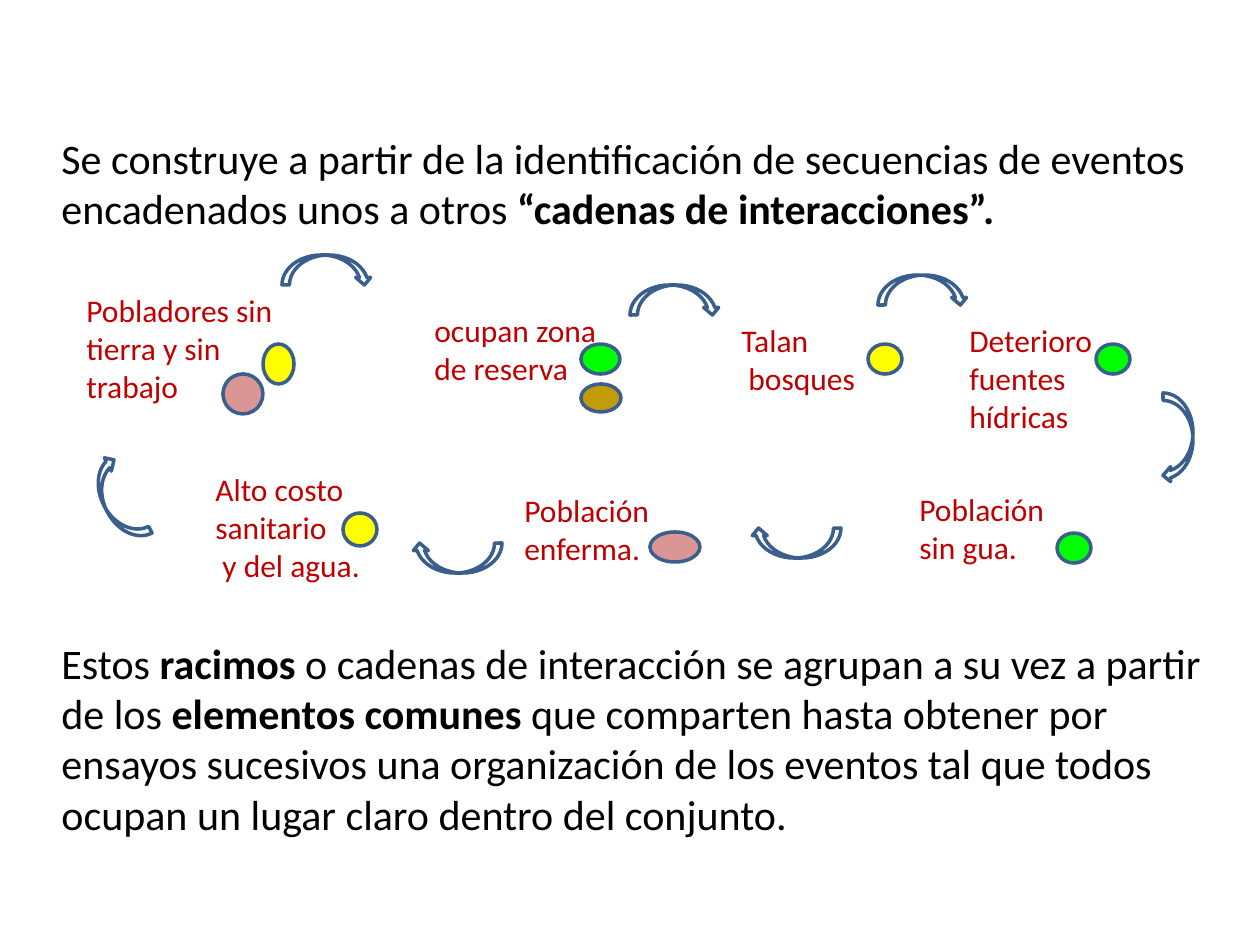
from dataclasses import dataclass

from pptx import Presentation
from pptx import util as u
from pptx.dml.color import RGBColor
from pptx.enum import shapes, text


@dataclass(frozen=True)
class Theme:
    font: str = "Calibri"
    body_size: int = 24
    event_size: int = 18
    body: str = "000000"
    event: str = "C00000"
    outline: str = "3A5F8C"
    outline_width: int = 2
    yellow: str = "FFFF00"
    pink: str = "D99694"
    green: str = "00FF00"
    ochre: str = "C29B0A"


THEME = Theme()
PX = 914400 / 126
SLIDE = (1260, 945)

# Runs are (wording, bold)
BODY = [
    [("Se construye a partir de la identificación de secuencias de eventos "
      "encadenados unos a otros ", False),
     ("“cadenas de interacciones”.", True)],
    [("Estos ", False), ("racimos ", True),
     ("o cadenas de interacción se agrupan a su vez a partir de los ", False),
     ("elementos comunes ", True),
     ("que comparten hasta obtener por ensayos sucesivos una organización de "
      "los eventos tal que todos ocupan un lugar claro dentro del conjunto.", False)],
]
BODY_BOX = (49, 118, 1177, 776)
BODY_TOP_INSET = 14
CHAIN_GAP = 231  # points left between the paragraphs for the chain of events

# Each event: paragraphs, box, and its markers as (colour, box)
EVENTS = [
    (["Pobladores sin tierra y sin trabajo"], (74, 285, 238, 127),
     [(THEME.yellow, (263, 344, 31, 40)), (THEME.pink, (223, 374, 40, 40))]),
    (["ocupan zona de reserva"], (422, 305, 218, 89),
     [(THEME.green, (581, 344, 39, 30)), (THEME.ochre, (581, 384, 40, 28))]),
    (["Talan", " bosques"], (729, 315, 189, 89),
     [(THEME.yellow, (868, 344, 34, 30))]),
    (["Deterioro fuentes hídricas"], (957, 315, 189, 127),
     [(THEME.green, (1096, 344, 34, 30))]),
    (["Población sin gua."], (907, 484, 179, 89),
     [(THEME.green, (1057, 533, 34, 30))]),
    (["Población enferma."], (512, 485, 179, 89),
     [(THEME.pink, (650, 532, 50, 30))]),
    (["Alto costo sanitario", " y del agua."], (203, 464, 179, 127),
     [(THEME.yellow, (343, 513, 34, 33))]),
]

# Left, top and rotation of each arrow, in the order of the chain
ARROWS = [
    (282, 255, 0), (630, 285, 0), (878, 275, 0), (1133, 423, 90),
    (751, 528, 180), (412, 543, 180), (73, 485, 242.5),
]
ARROW_SIZE = (90, 30)


def emu(*lengths):
    return [u.Emu(round(length * PX)) for length in lengths]


def add_text(slide, box, paragraphs, size, colour):
    frame = slide.shapes.add_textbox(*emu(*box)).text_frame
    frame.word_wrap = True
    frame.vertical_anchor = text.MSO_ANCHOR.TOP
    for i, runs in enumerate(paragraphs):
        paragraph = frame.add_paragraph() if i else frame.paragraphs[0]
        paragraph.font.name = THEME.font
        paragraph.font.size = u.Pt(size)
        paragraph.font.color.rgb = RGBColor.from_string(colour)
        for wording, bold in runs:
            run = paragraph.add_run()
            run.text = wording
            if bold:
                run.font.bold = True
    return frame


def add_outlined(slide, kind, box, fill=None):
    shape = slide.shapes.add_shape(kind, *emu(*box))
    shape.shadow.inherit = False
    if fill:
        shape.fill.solid()
        shape.fill.fore_color.rgb = RGBColor.from_string(fill)
    else:
        shape.fill.background()
    shape.line.color.rgb = RGBColor.from_string(THEME.outline)
    shape.line.width = u.Pt(THEME.outline_width)
    return shape


def main():
    deck = Presentation()
    deck.slide_width, deck.slide_height = emu(*SLIDE)
    slide = deck.slides.add_slide(deck.slide_layouts[6])

    body = add_text(slide, BODY_BOX, BODY, THEME.body_size, THEME.body)
    body.margin_top, = emu(BODY_TOP_INSET)
    body.paragraphs[1].space_before = u.Pt(CHAIN_GAP)

    for lines, box, markers in EVENTS:
        add_text(slide, box, [[(line, False)] for line in lines],
                 THEME.event_size, THEME.event)
        for colour, marker_box in markers:
            add_outlined(slide, shapes.MSO_SHAPE.OVAL, marker_box, colour)

    for left, top, rotation in ARROWS:
        arrow = add_outlined(slide, shapes.MSO_SHAPE.CURVED_DOWN_ARROW,
                             (left, top, *ARROW_SIZE))
        arrow.rotation = rotation

    deck.save("out.pptx")


if __name__ == "__main__":
    main()
